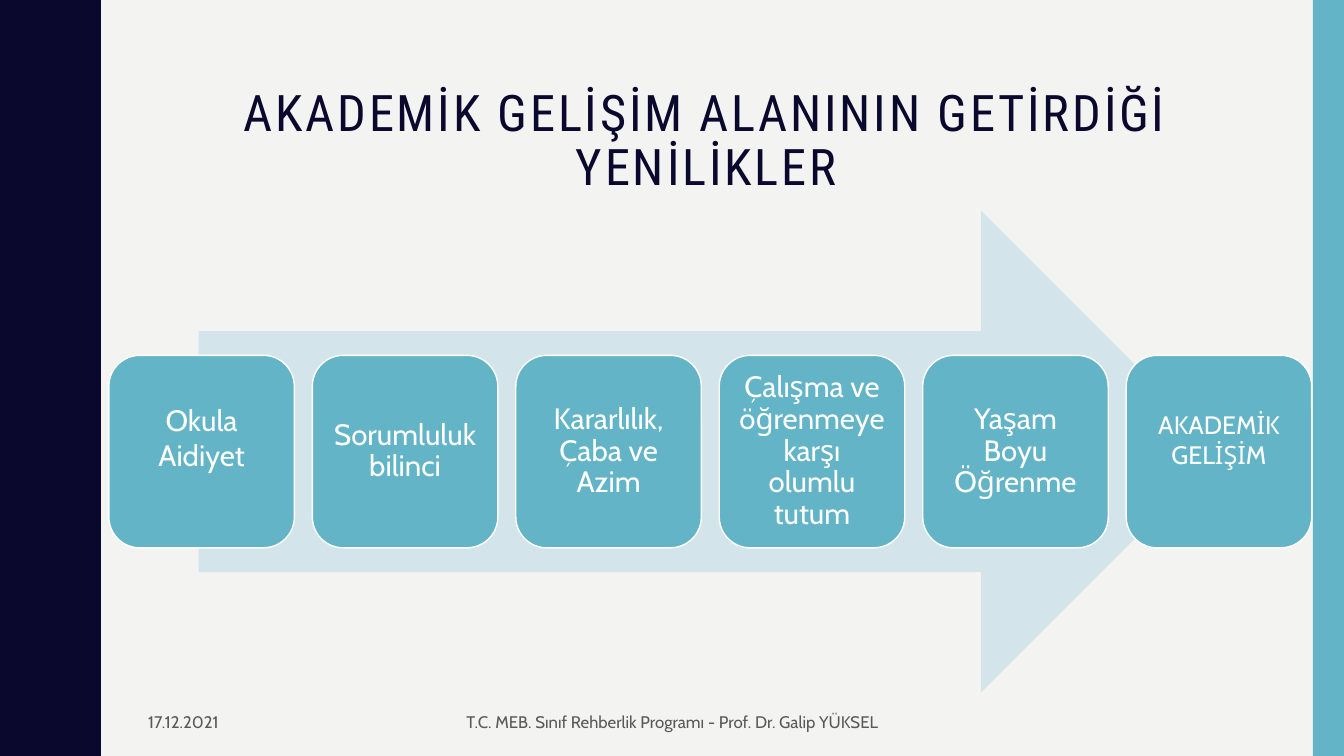
from pptx import Presentation
from pptx.dml.color import RGBColor
from pptx.enum.shapes import MSO_SHAPE
from pptx.enum.text import MSO_ANCHOR, MSO_AUTO_SIZE, PP_ALIGN
from pptx.util import Inches, Pt

COLORS = {
    "background": "F3F3F2",
    "navy": "0B082E",
    "teal": "62B4C6",
    "pale": "D3E5EA",
    "white": "FFFFFF",
    "gray": "595959",
}

# Half a wave of the left band: (x, y), mirrored for the other half
WAVE_PERIOD = 1.5
HALF_WAVE = [
    (0.78, 0), (0.78, 0.07), (0.79, 0.14), (0.8, 0.2), (0.81, 0.25),
    (0.83, 0.29), (0.85, 0.33), (0.87, 0.38), (0.89, 0.42), (0.91, 0.46),
    (0.93, 0.5), (0.95, 0.55), (0.96, 0.61), (0.97, 0.68), (0.97, 0.75),
]

# Step text, font size, line spacing, lift of the text above the middle
STEPS = [
    ("Okula Aidiyet", 21, 1.0, 0.14),
    ("Sorumluluk bilinci", 21, 0.9, 0),
    ("Kararlılık, Çaba ve Azim", 21, 0.9, 0),
    ("Çalışma ve öğrenmeye karşı olumlu tutum", 21, 0.9, 0),
    ("Yaşam Boyu Öğrenme", 21, 0.9, 0),
    ("AKADEMİK GELİŞİM", 18, 1.0, 0.12),
]


def rgb(name):
    return RGBColor.from_string(COLORS[name])


def paint(sp, fill, line=None):
    sp.shadow.inherit = False
    sp.fill.solid()
    sp.fill.fore_color.rgb = rgb(fill)
    if line:
        sp.line.color.rgb = rgb(line)
        sp.line.width = Pt(1)
    else:
        sp.line.fill.background()


def write(sp, text, size=12, font="Cabin", color="gray", align=PP_ALIGN.CENTER,
          anchor=MSO_ANCHOR.MIDDLE, line_spacing=1.0, tracking=0):
    tf = sp.text_frame
    tf.word_wrap = True
    tf.auto_size = MSO_AUTO_SIZE.NONE
    tf.vertical_anchor = anchor
    p = tf.paragraphs[0]
    p.alignment = align
    p.line_spacing = line_spacing
    r = p.add_run()
    r.text = text
    r.font.size = Pt(size)
    r.font.name = font
    r.font.color.rgb = rgb(color)
    if tracking:
        r.font._element.set("spc", str(tracking * 100))
    return tf


def add_wave_band(s, height):
    mirrored = [(x, WAVE_PERIOD - y) for x, y in reversed(HALF_WAVE[1:-1])]
    wave = HALF_WAVE + mirrored
    edge = [(x, y + i * WAVE_PERIOD)
            for i in range(round(height / WAVE_PERIOD)) for x, y in wave]
    outline = edge + [(HALF_WAVE[0][0], height), (0, height)]
    builder = s.shapes.build_freeform(0, 0, scale=Inches(1))
    builder.add_line_segments(outline, close=True)
    paint(builder.convert_to_shape(), "navy")


def add_side_bar(s, x, y, w, h):
    bar = s.shapes.add_shape(MSO_SHAPE.RECTANGLE, Inches(x), Inches(y), Inches(w), Inches(h))
    paint(bar, "teal")


def add_title(s, x, y, w, h):
    title = s.shapes.title
    title.left, title.top, title.width, title.height = map(Inches, (x, y, w, h))
    write(title, "AKADEMİK GELİŞİM ALANININ GETİRDİĞİ YENİLİKLER", size=36,
          font="Roboto Condensed", color="navy", anchor=MSO_ANCHOR.TOP,
          line_spacing=0.9, tracking=2)


def add_footer_text(s, x, y, w, h, text, align):
    box = s.shapes.add_textbox(Inches(x), Inches(y), Inches(w), Inches(h))
    write(box, text, align=align)


def add_process(s, x, y, w, h):
    # Arrow behind the steps
    arrow_w, step_w, step_h, inset = 10.15, 1.84, 1.91, 0.09
    arrow = s.shapes.add_shape(MSO_SHAPE.RIGHT_ARROW, Inches(x + (w - arrow_w) / 2),
                               Inches(y), Inches(arrow_w), Inches(h))
    paint(arrow, "pale")

    # Evenly spaced steps
    pitch = (w - step_w) / (len(STEPS) - 1)
    top = y + (h - step_h) / 2
    for i, (text, size, spacing, lift) in enumerate(STEPS):
        step = s.shapes.add_shape(MSO_SHAPE.ROUNDED_RECTANGLE, Inches(x + i * pitch),
                                  Inches(top), Inches(step_w), Inches(step_h))
        paint(step, "teal", line="white")
        tf = write(step, text, size=size, color="white", line_spacing=spacing)
        tf.margin_left = tf.margin_right = tf.margin_top = Inches(inset)
        tf.margin_bottom = Inches(inset + 2 * lift)


def main():
    prs = Presentation()
    prs.slide_width, prs.slide_height = Inches(13.33), Inches(7.5)
    s = prs.slides.add_slide(prs.slide_layouts[5])
    s.background.fill.solid()
    s.background.fill.fore_color.rgb = rgb("background")

    add_wave_band(s, 7.5)
    add_side_bar(s, 13.02, 0, 0.31, 7.5)
    add_title(s, 1.44, 0.82, 11.13, 1.45)
    add_footer_text(s, 1.37, 6.97, 2.55, 0.38, "17.12.2021", PP_ALIGN.LEFT)
    add_footer_text(s, 4.42, 6.97, 4.5, 0.38,
                    "T.C. MEB. Sınıf Rehberlik Programı - Prof. Dr. Galip YÜKSEL",
                    PP_ALIGN.CENTER)
    add_process(s, 1.08, 2.09, 11.93, 4.78)
    prs.save("out.pptx")


if __name__ == "__main__":
    main()
